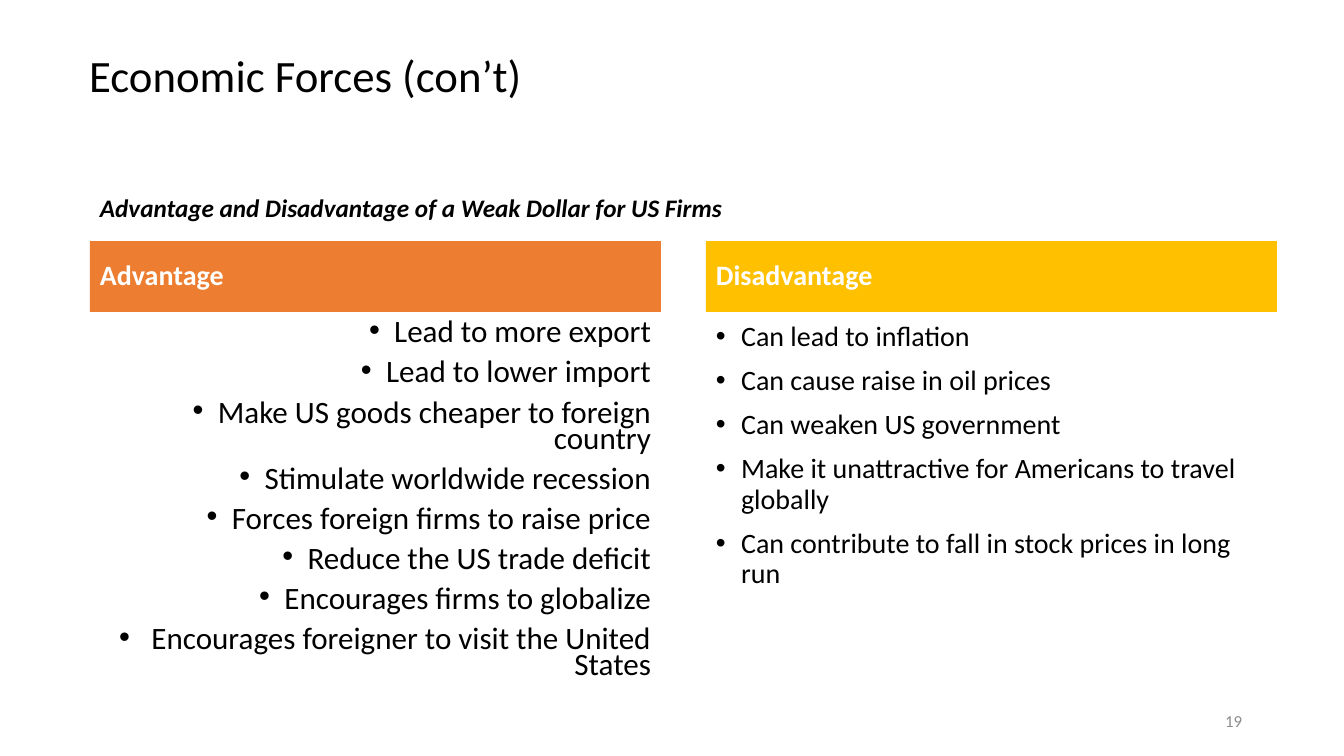
from lxml.etree import SubElement
from pptx import Presentation
from pptx.dml.color import RGBColor
from pptx.enum.shapes import MSO_SHAPE
from pptx.enum.text import MSO_ANCHOR, MSO_AUTO_SIZE, PP_ALIGN
from pptx.oxml.ns import qn
from pptx.util import Emu, Pt

BLACK = RGBColor(0x00, 0x00, 0x00)
WHITE = RGBColor(0xFF, 0xFF, 0xFF)
GRAY = RGBColor(0x8C, 0x8C, 0x8C)
ORANGE = RGBColor(0xED, 0x7D, 0x31)
GOLD = RGBColor(0xFF, 0xC0, 0x00)

ADVANTAGES = [
    "Lead to more export",
    "Lead to lower import",
    "Make US goods cheaper to foreign country",
    "Stimulate worldwide recession",
    "Forces foreign firms to raise price",
    "Reduce the US trade deficit",
    "Encourages firms to globalize",
    " Encourages foreigner to visit the United States",
]
DISADVANTAGES = [
    "Can lead to inflation",
    "Can cause raise in oil prices",
    "Can weaken US government",
    "Make it unattractive for Americans to travel globally",
    "Can contribute to fall in stock prices in long run",
]


def px(length):
    return Emu(round(length * 914400 / 100.8))


class SlideBuilder:
    font = "Calibri"
    bullet_indent = 228600

    def __init__(self, deck):
        self.page = deck.slides.add_slide(deck.slide_layouts[5])

    def add_span(self, para, text, size, color, bold=False, italic=False):
        span = para.add_run()
        span.text = text
        span.font.name = self.font
        span.font.size = Pt(size)
        span.font.color.rgb = color
        span.font.bold = bold
        span.font.italic = italic

    def title(self, text, left, top, width, height):
        box = self.page.shapes.title
        box.left, box.top = px(left), px(top)
        box.width, box.height = px(width), px(height)
        frame = box.text_frame
        frame.auto_size = MSO_AUTO_SIZE.NONE
        frame.vertical_anchor = MSO_ANCHOR.MIDDLE
        para = frame.paragraphs[0]
        para.alignment = PP_ALIGN.LEFT
        para.line_spacing = 0.9
        self.add_span(para, text, 32, BLACK)

    def text_box(self, left, top, width, height, wrap=True):
        box = self.page.shapes.add_textbox(px(left), px(top), px(width), px(height))
        box.text_frame.word_wrap = wrap
        return box

    def label(self, text, left, top, width, height, size, color,
              align=PP_ALIGN.LEFT, anchor=MSO_ANCHOR.TOP, wrap=True, strong=False):
        frame = self.text_box(left, top, width, height, wrap).text_frame
        frame.vertical_anchor = anchor
        para = frame.paragraphs[0]
        para.alignment = align
        self.add_span(para, text, size, color, bold=strong, italic=strong)

    def header(self, text, left, top, width, height, color):
        bar = self.page.shapes.add_shape(
            MSO_SHAPE.RECTANGLE, px(left), px(top), px(width), px(height))
        bar.shadow.inherit = False
        bar.fill.solid()
        bar.fill.fore_color.rgb = color
        bar.line.fill.background()
        bar.text_frame.vertical_anchor = MSO_ANCHOR.MIDDLE
        para = bar.text_frame.paragraphs[0]
        para.alignment = PP_ALIGN.LEFT
        para.line_spacing = 0.9
        self.add_span(para, text, 20, WHITE, bold=True)

    def bullets(self, items, left, top, width, height, size, spacing, align):
        box = self.text_box(left, top, width, height)
        box.fill.solid()
        box.fill.fore_color.rgb = WHITE
        frame = box.text_frame
        for index, item in enumerate(items):
            para = frame.add_paragraph() if index else frame.paragraphs[0]
            para.alignment = align
            para.line_spacing = spacing
            para.space_before = Pt(10)
            self.add_bullet(para)
            self.add_span(para, item, size, BLACK)

    def add_bullet(self, para):
        properties = para._p.get_or_add_pPr()
        properties.set("marL", str(self.bullet_indent))
        properties.set("indent", str(-self.bullet_indent))
        SubElement(properties, qn("a:buFont")).set("typeface", "Arial")
        SubElement(properties, qn("a:buChar")).set("char", "•")


def main():
    deck = Presentation()
    deck.slide_width, deck.slide_height = px(1344), px(756)
    slide = SlideBuilder(deck)
    slide.title("Economic Forces (con’t)", 79, 30, 1199, 96)
    slide.label("Advantage and Disadvantage of a Weak Dollar for US Firms",
                90, 187, 650, 40, 18, BLACK, wrap=False, strong=True)
    columns = [
        ("Advantage", ORANGE, ADVANTAGES, 22.2, 0.7, PP_ALIGN.RIGHT),
        ("Disadvantage", GOLD, DISADVANTAGES, 20, 0.9, PP_ALIGN.LEFT),
    ]
    for index, (heading, color, items, size, spacing, align) in enumerate(columns):
        left = 90 + index * 616
        slide.bullets(items, left, 317, 571, 395, size, spacing, align)
        slide.header(heading, left, 241, 571, 71, color)
    slide.label("19", 950, 701, 302, 40, 12, GRAY,
                align=PP_ALIGN.RIGHT, anchor=MSO_ANCHOR.MIDDLE)
    deck.save("out.pptx")


if __name__ == "__main__":
    main()
